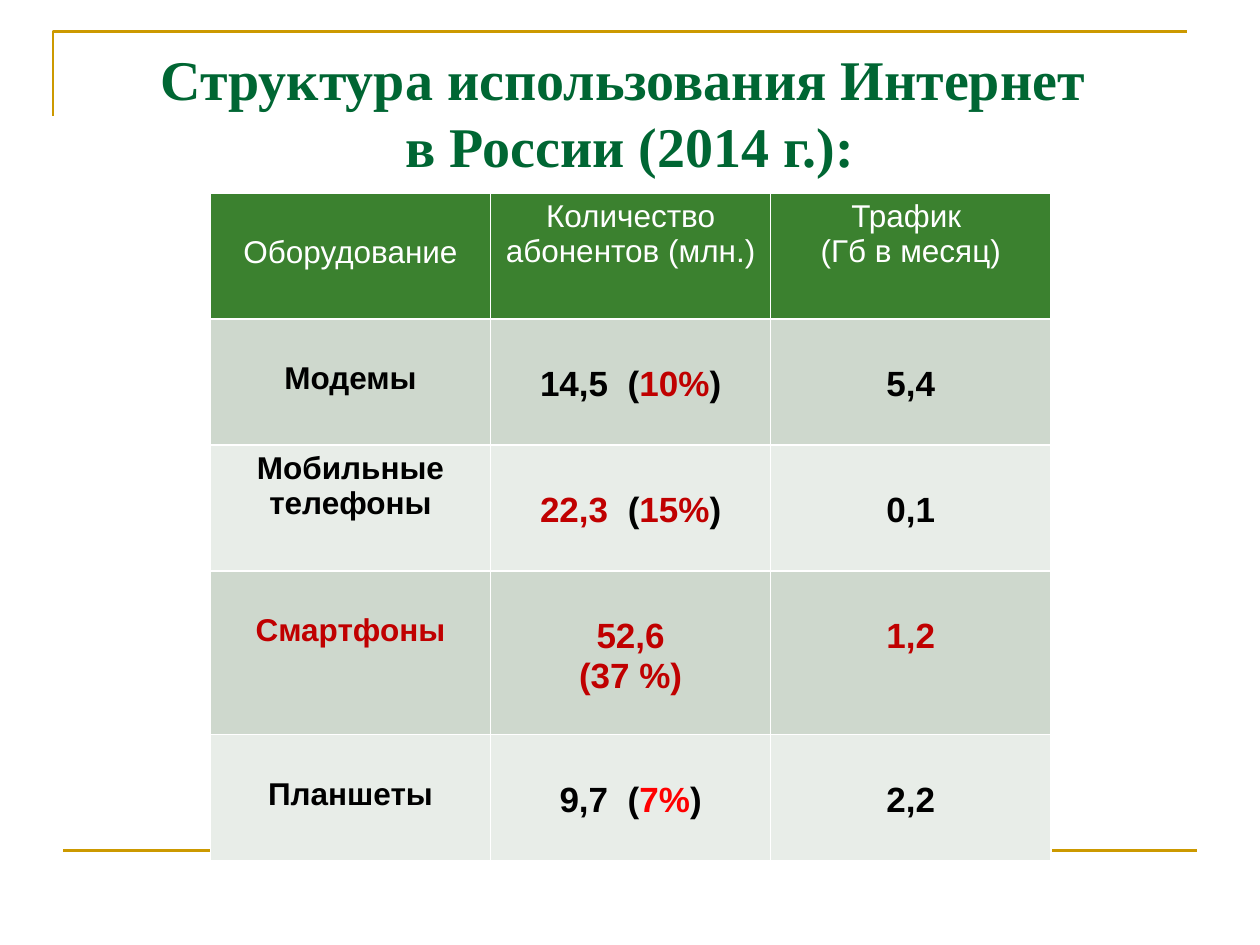
from lxml import etree
from pptx import Presentation
from pptx.dml.color import RGBColor
from pptx.enum.shapes import MSO_CONNECTOR
from pptx.enum.text import MSO_ANCHOR, MSO_AUTO_SIZE, PP_ALIGN
from pptx.oxml.ns import qn
from pptx.util import Inches, Pt

CENTER = PP_ALIGN.CENTER
TOP = MSO_ANCHOR.TOP
STRAIGHT = MSO_CONNECTOR.STRAIGHT
NO_FIT = MSO_AUTO_SIZE.NONE

COLORS = {
    "gold": "CC9900", "title": "006633", "head": "3B812F",
    "dark": "CED8CD", "light": "E8EDE8", "white": "FFFFFF",
    "black": "000000", "red": "C00000", "bright": "FF0000",
}
HEADS = ["Оборудование", "Количество абонентов (млн.)", "Трафик \n(Гб в месяц)"]
ROWS = [
    ("Модемы", "black",
     [("14,5  (", "black"), ("10%", "red"), (")", "black")], "5,4"),
    ("Мобильные телефоны", "black",
     [("22,3  ", "red"), ("(", "black"), ("15%", "red"), (")", "black")], "0,1"),
    ("Смартфоны", "red", [("52,6\n(37 %)", "red")], "1,2"),
    ("Планшеты", "black",
     [("9,7  (", "black"), ("7%", "bright"), (")", "black")], "2,2"),
]
HEIGHTS = [1, 1, 1, 1.3, 1]
RAISED = {(0, 1), (0, 2), (2, 0)}


def color(name):
    return RGBColor.from_string(COLORS[name])


def style(font, size, name, bold, face="Arial"):
    font.size = Pt(size)
    font.name = face
    font.bold = bold
    font.color.rgb = color(name)


def add_title(slide):
    title = slide.shapes.title
    title.left, title.top = Inches(0.5), Inches(0.3)
    title.width, title.height = Inches(9), Inches(1.01)
    frame = title.text_frame
    frame.auto_size = NO_FIT
    frame.vertical_anchor = TOP
    frame.text = "Структура использования Интернет \vв России (2014 г.):"
    para = frame.paragraphs[0]
    para.alignment = CENTER
    for run in para.runs:
        style(run.font, 32, "title", True, "Times New Roman")


def add_frame(slide):
    build = slide.shapes.build_freeform(Inches(0.42), Inches(0.92), scale=1.0)
    build.add_line_segments(
        [(Inches(0.42), Inches(0.25)), (Inches(9.42), Inches(0.25))], close=False)
    corner = build.convert_to_shape()
    corner.shadow.inherit = False
    corner.fill.background()
    rule = slide.shapes.add_connector(
        STRAIGHT, Inches(0.5), Inches(6.75), Inches(9.5), Inches(6.75))
    etree.SubElement(rule._element.spPr, qn("a:effectLst"))
    for shape in (corner, rule):
        shape.line.color.rgb = color("gold")
        shape.line.width = Pt(1.5)


def add_edges(cell):
    props = cell._tc.get_or_add_tcPr()
    for i, side in enumerate(("lnL", "lnR", "lnT", "lnB")):
        line = etree.Element(qn(f"a:{side}"), w=str(Pt(1)))
        fill = etree.SubElement(line, qn("a:solidFill"))
        etree.SubElement(fill, qn("a:srgbClr"), val=COLORS["white"])
        props.insert(i, line)


def fill_cell(cell, parts, size, fill, bold, drop):
    cell.fill.solid()
    cell.fill.fore_color.rgb = color(fill)
    cell.vertical_anchor = TOP
    cell.margin_top = Inches(0.05) + (Pt(size * 1.15) if drop else 0)
    frame = cell.text_frame
    para = frame.paragraphs[0]
    para.alignment = CENTER
    for text, name in parts:
        for i, line in enumerate(text.split("\n")):
            if i:
                para = frame.add_paragraph()
                para.alignment = CENTER
            run = para.add_run()
            run.text = line
            style(run.font, size, name, bold)
    add_edges(cell)


def add_grid(slide):
    grid = slide.shapes.add_table(
        len(HEIGHTS), len(HEADS), Inches(1.67), Inches(1.53),
        Inches(6.67), Inches(sum(HEIGHTS))).table
    for row, height in zip(grid.rows, HEIGHTS):
        row.height = Inches(height)
    for c, text in enumerate(HEADS):
        fill_cell(grid.cell(0, c), [(text, "white")], 18, "head", False,
                  (0, c) not in RAISED)
    for r, (label, tone, count, traffic) in enumerate(ROWS, 1):
        fill = "dark" if r % 2 else "light"
        for c, parts in enumerate(([(label, tone)], count, [(traffic, tone)])):
            fill_cell(grid.cell(r, c), parts, 20 if c else 18, fill, True,
                      (r, c) not in RAISED)


def main():
    deck = Presentation()
    deck.slide_width, deck.slide_height = Inches(10), Inches(7.5)
    slide = deck.slides.add_slide(deck.slide_layouts[5])
    add_frame(slide)
    add_title(slide)
    add_grid(slide)
    deck.save("out.pptx")


if __name__ == "__main__":
    main()
